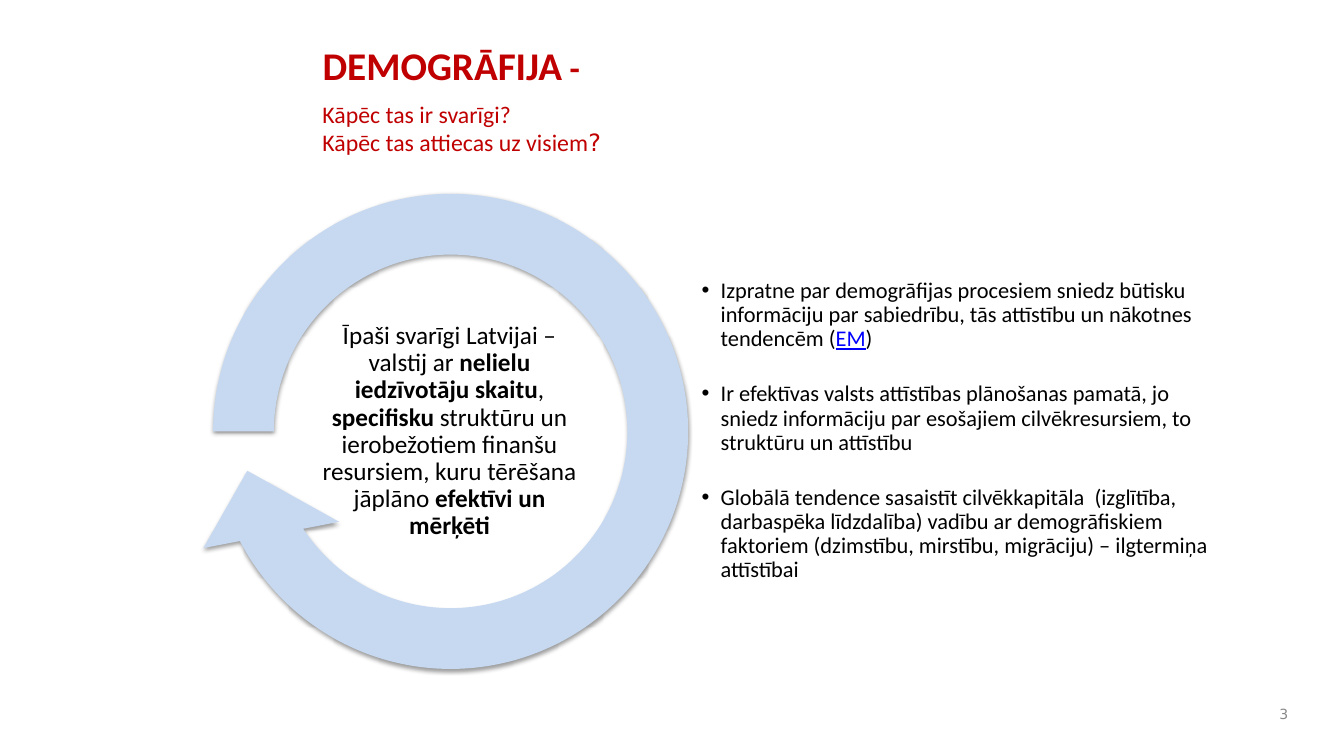
from dataclasses import dataclass

from lxml import etree
from pptx import Presentation
from pptx.dml.color import RGBColor
from pptx.enum.shapes import MSO_SHAPE
from pptx.enum.text import MSO_ANCHOR, MSO_AUTO_SIZE, PP_ALIGN
from pptx.oxml.ns import qn
from pptx.util import Inches, Pt

CIRCULAR_ARROW = MSO_SHAPE.CIRCULAR_ARROW
TOP, MIDDLE = MSO_ANCHOR.TOP, MSO_ANCHOR.MIDDLE
LEFT, CENTER, RIGHT = PP_ALIGN.LEFT, PP_ALIGN.CENTER, PP_ALIGN.RIGHT
NO_AUTOFIT = MSO_AUTO_SIZE.NONE

WIDTH, HEIGHT = Inches(13.333), Inches(7.5)
COL, ROW = WIDTH / 100, HEIGHT / 100
BULLET_INDENT = Inches(0.19)
COLORS = {
    "heading": "C00000",
    "body": "000000",
    "link": "0000FF",
    "number": "898989",
    "ring": "C6D9F1",
}


@dataclass
class Area:
    col: float
    row: float
    cols: float
    rows: float

    def box(self) -> tuple:
        return (round(self.col * COL), round(self.row * ROW),
                round(self.cols * COL), round(self.rows * ROW))


@dataclass
class Run:
    text: str
    bold: bool = False
    underline: bool = False
    color: str = ""
    font: str = ""
    size: float = 0


@dataclass
class Block:
    area: Area
    paragraphs: list
    size: float
    color: str = "body"
    font: str = "Calibri"
    align: PP_ALIGN = LEFT
    anchor: MSO_ANCHOR = MIDDLE
    inset_x: float = 0.01
    inset_y: float = 0.01
    line_spacing: float = 0.9
    gap: float = 0
    bullet: bool = False


TITLE = Block(
    Area(23.25, 4.8, 50, 7.87),
    [[Run("DEMOGRĀFIJA", bold=True), Run(" -", bold=True, size=24)]],
    28, "heading", anchor=TOP, inset_x=0.1, inset_y=0.05, line_spacing=1)

BLOCKS = [
    Block(
        Area(52.13, 42.4, 37.95, 29.2),
        [
            [Run("Izpratne par demogrāfijas procesiem sniedz būtisku informāciju "
                 "par sabiedrību, tās attīstību un nākotnes tendencēm ("),
             Run("EM", underline=True, color="link"), Run(")")],
            [Run("Ir efektīvas valsts attīstības plānošanas pamatā, jo sniedz "
                 "informāciju par esošajiem cilvēkresursiem, to struktūru un attīstību")],
            [Run("Globālā tendence sasaistīt cilvēkkapitāla  (izglītība, darbaspēka "
                 "līdzdalība) vadību ar demogrāfiskiem faktoriem (dzimstību, mirstību, "
                 "migrāciju) – ilgtermiņa attīstībai")],
        ],
        16, gap=22, bullet=True),
    Block(
        Area(23.7, 42.27, 19.5, 29.6),
        [[Run("Īpaši svarīgi Latvijai – valstij ar "),
          Run("nelielu iedzīvotāju skaitu", bold=True), Run(", "),
          Run("specifisku", bold=True),
          Run(" struktūru un ierobežotiem finanšu resursiem, kuru tērēšana jāplāno "),
          Run("efektīvi un mērķēti", bold=True)]],
        18, align=CENTER),
    Block(
        Area(23.25, 12.47, 52.58, 9),
        [[Run("Kāpēc tas ir svarīgi?")],
         [Run("Kāpēc tas attiecas uz visiem"), Run("?", font="DejaVu Sans")]],
        17, "heading", anchor=TOP, inset_x=0.1, inset_y=0.05, line_spacing=1),
    Block(
        Area(93.3, 92.27, 3.3, 4.4), [[Run("3")]], 10, "number", "DejaVu Sans",
        RIGHT, inset_x=0.1, inset_y=0.05, line_spacing=1),
]

RING = Area(12.98, 20.53, 41.1, 73.07)
RING_ADJUSTMENTS = (0.11, 11.42, 90, 108, 0.125)


def rgb(name: str) -> RGBColor:
    return RGBColor.from_string(COLORS[name])


def place(sp, area: Area) -> None:
    sp.left, sp.top, sp.width, sp.height = area.box()


def add_bullet(p) -> None:
    pPr = p._p.get_or_add_pPr()
    pPr.set("marL", str(BULLET_INDENT))
    pPr.set("indent", str(-BULLET_INDENT))
    etree.SubElement(pPr, qn("a:buFont"), typeface="Arial")
    etree.SubElement(pPr, qn("a:buChar"), char="•")


def write_block(sp, block: Block) -> None:
    place(sp, block.area)
    tf = sp.text_frame
    tf.text = "\n".join("" for _ in block.paragraphs)
    tf.word_wrap = True
    tf.auto_size = NO_AUTOFIT
    tf.vertical_anchor = block.anchor
    tf.margin_left = tf.margin_right = Inches(block.inset_x)
    tf.margin_top = tf.margin_bottom = Inches(block.inset_y)
    for i, (p, runs) in enumerate(zip(tf.paragraphs, block.paragraphs)):
        if block.bullet:
            add_bullet(p)
        p.alignment = block.align
        p.line_spacing = block.line_spacing
        if i and block.gap:
            p.space_before = Pt(block.gap)
        for item in runs:
            r = p.add_run()
            r.text = item.text
            r.font.name = item.font or block.font
            r.font.size = Pt(item.size or block.size)
            r.font.bold = item.bold
            r.font.underline = item.underline
            r.font.color.rgb = rgb(item.color or block.color)


def add_ring(slide) -> None:
    sp = slide.shapes.add_shape(CIRCULAR_ARROW, *RING.box())
    for i, value in enumerate(RING_ADJUSTMENTS):
        sp.adjustments[i] = value
    sp.fill.solid()
    sp.fill.fore_color.rgb = rgb("ring")
    sp.line.fill.background()
    sp.shadow.inherit = False
    effects = sp._element.spPr.find(qn("a:effectLst"))
    shadow = etree.SubElement(effects, qn("a:outerShdw"), blurRad=str(Pt(3.1)),
                              dist=str(Pt(1.6)), dir="5400000", rotWithShape="0")
    color = etree.SubElement(shadow, qn("a:srgbClr"), val=COLORS["body"])
    etree.SubElement(color, qn("a:alpha"), val="38000")


def main() -> None:
    prs = Presentation()
    prs.slide_width, prs.slide_height = WIDTH, HEIGHT
    slide = prs.slides.add_slide(prs.slide_layouts[5])
    add_ring(slide)
    write_block(slide.shapes.title, TITLE)
    for block in BLOCKS:
        write_block(slide.shapes.add_textbox(*block.area.box()), block)
    prs.save("out.pptx")


if __name__ == "__main__":
    main()
